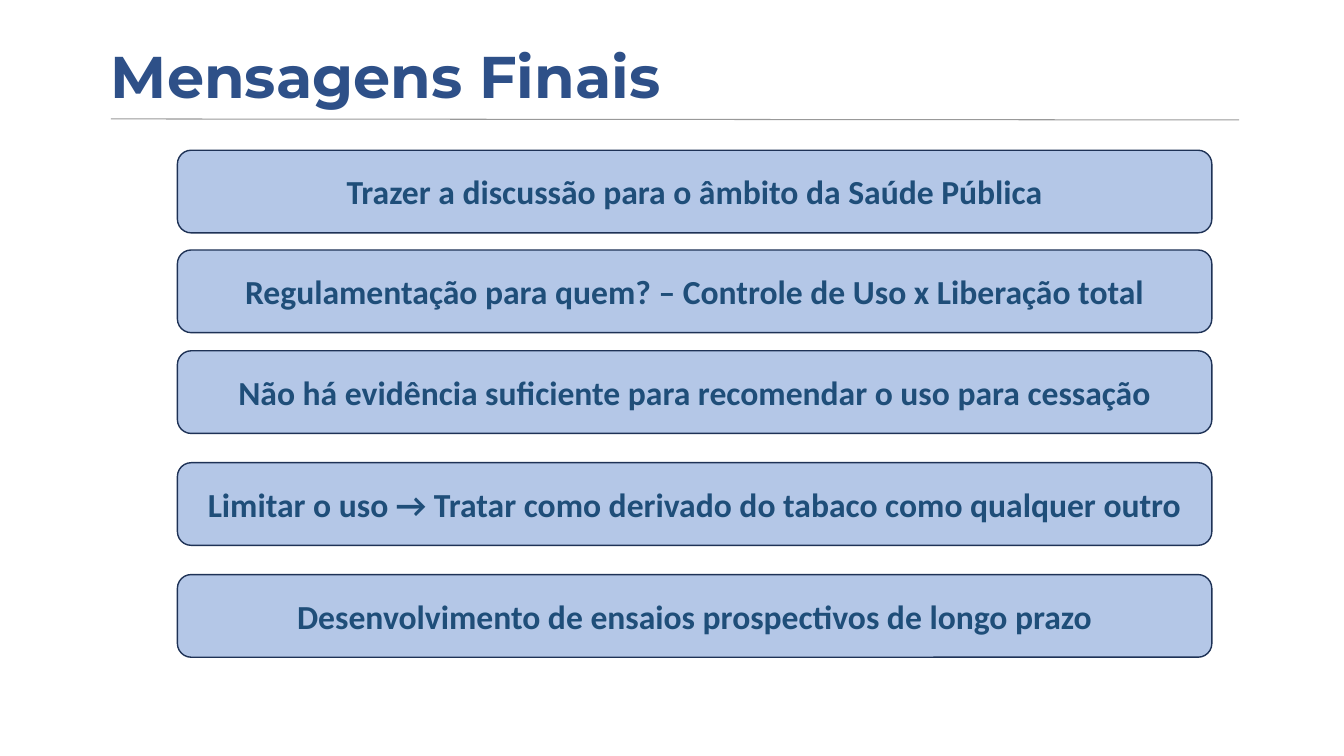
from pptx import Presentation
from pptx.dml.color import RGBColor
from pptx.enum.shapes import MSO_CONNECTOR as Connector, MSO_SHAPE as Shape
from pptx.enum.text import MSO_ANCHOR as Anchor, PP_ALIGN as Align
from pptx.oxml.ns import qn
from pptx.util import Inches, Pt
from lxml import etree

TITLE = "Mensagens Finais"
# (top in inches, message)
MESSAGES = [
    (1.49, "Trazer a discussão para o âmbito da Saúde Pública"),
    (2.48, "Regulamentação para quem? – Controle de Uso x Liberação total"),
    (3.48, "Não há evidência suficiente para recomendar o uso para cessação"),
    (4.59, "Limitar o uso → Tratar como derivado do tabaco como qualquer outro"),
    (5.70, "Desenvolvimento de ensaios prospectivos de longo prazo"),
]
BOX_LEFT, BOX_WIDTH, BOX_HEIGHT = 1.76, 10.26, 0.82


def color(hex_string):
    return RGBColor.from_string(hex_string)


def write(shape, text, font_name, size, hex_string, alignment, anchor):
    frame = shape.text_frame
    frame.word_wrap = True
    frame.vertical_anchor = anchor
    frame.text = text
    paragraph = frame.paragraphs[0]
    paragraph.alignment = alignment
    font = paragraph.font
    font.name, font.size, font.bold = font_name, Pt(size), True
    font.color.rgb = color(hex_string)


def add_title(slide):
    title = slide.shapes.title
    title.left, title.top = Inches(1.1), Inches(0.39)
    title.width, title.height = Inches(7.94), Inches(0.71)
    frame = title.text_frame
    frame.margin_left = frame.margin_right = 0
    frame.margin_top = frame.margin_bottom = 0
    write(title, TITLE, "Montserrat", 42, "2E5088", Align.LEFT, Anchor.TOP)


def add_title_rule(slide):
    rule = slide.shapes.add_connector(
        Connector.STRAIGHT, Inches(1.1), Inches(1.18), Inches(12.29), Inches(1.19))
    rule.line.color.rgb = color("999999")
    rule.line.width = Pt(0.75)
    etree.SubElement(rule._element.spPr, qn("a:effectLst"))


def add_message(slide, top, message):
    box = slide.shapes.add_shape(
        Shape.ROUNDED_RECTANGLE, Inches(BOX_LEFT), Inches(top),
        Inches(BOX_WIDTH), Inches(BOX_HEIGHT))
    box.shadow.inherit = False
    box.fill.solid()
    box.fill.fore_color.rgb = color("B4C7E7")
    box.line.color.rgb = color("1E3256")
    box.line.width = Pt(1)
    write(box, message, "Calibri", 24, "1F4E79", Align.CENTER, Anchor.MIDDLE)


def main():
    presentation = Presentation()
    presentation.slide_width = Inches(13.33)
    presentation.slide_height = Inches(7.5)
    title_only = presentation.slide_layouts[5]
    slide = presentation.slides.add_slide(title_only)
    add_title(slide)
    add_title_rule(slide)
    for top, message in MESSAGES:
        add_message(slide, top, message)
    presentation.save("out.pptx")


if __name__ == "__main__":
    main()
